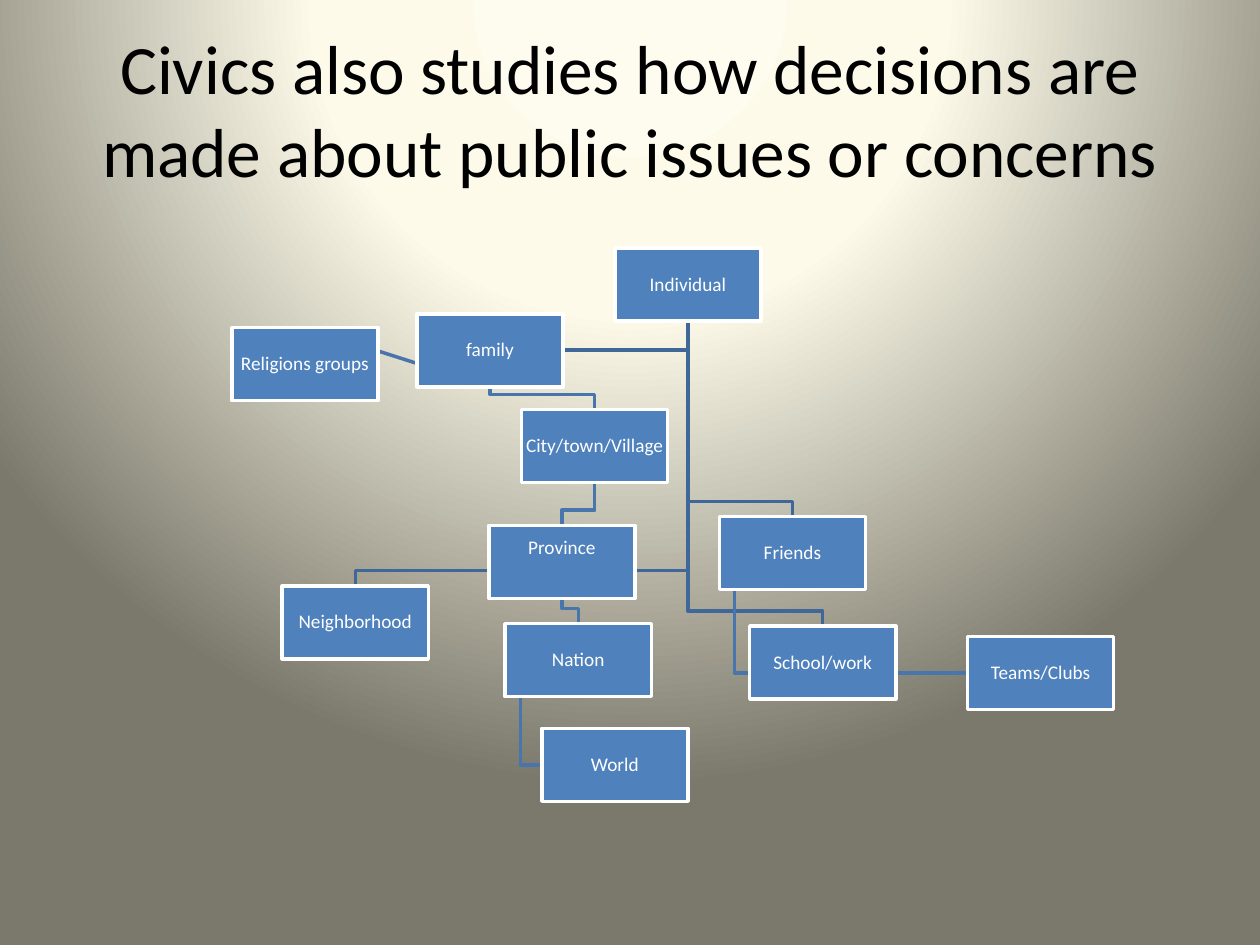
from pptx import Presentation
from pptx.dml.color import RGBColor
from pptx.enum.shapes import MSO_CONNECTOR, MSO_SHAPE
from pptx.enum.text import MSO_ANCHOR, MSO_AUTO_SIZE, PP_ALIGN
from pptx.oxml import parse_xml
from pptx.oxml.ns import nsdecls, qn
from pptx.util import Inches, Pt
from lxml.etree import SubElement

BLACK = RGBColor(0x00, 0x00, 0x00)
WHITE = RGBColor(0xFF, 0xFF, 0xFF)
BLUE = RGBColor(0x4F, 0x81, 0xBD)
MAIN_LINE = RGBColor(0x3F, 0x67, 0x97)
SUB_LINE = RGBColor(0x48, 0x75, 0xAC)
BACKDROP = [(0, RGBColor(0xFE, 0xFC, 0xEE)), (40, RGBColor(0xFD, 0xFA, 0xEA)),
            (100, RGBColor(0x7B, 0x79, 0x6B))]

CELL = Inches(0.1)  # the slide is 100 columns by 75 rows
BOX_SIZE = (11.6, 5.8)
BEND = round(1.2 * CELL)  # distance from a bend to the box it leads to

# Box name: column, row
BOXES = {
    "Individual": (48.8, 19.7),
    "Friends": (57.1, 41),
    "Teams/Clubs": (76.8, 50.5),
    "School/work": (59.5, 49.7),
    "Neighborhood": (22.4, 46.5),
    "family": (33.1, 24.9),
    "Religions groups": (18.4, 26),
    "City/town/Village": (41.4, 32.5),
    "Province": (38.8, 41.7),
    "Nation": (40.1, 49.5),
    "World": (43, 57.8),
}

# Parent, child, route, colour
LINKS = [
    ("Nation", "World", "hang", SUB_LINE),
    ("Province", "Nation", "drop", SUB_LINE),
    ("City/town/Village", "Province", "drop", SUB_LINE),
    ("family", "City/town/Village", "drop", SUB_LINE),
    ("family", "Religions groups", "straight", SUB_LINE),
    ("Individual", "family", "side", MAIN_LINE),
    ("Individual", "Neighborhood", "drop", MAIN_LINE),
    ("Individual", "School/work", "drop", MAIN_LINE),
    ("Friends", "Teams/Clubs", "hang", SUB_LINE),
    ("Individual", "Friends", "drop", MAIN_LINE),
]


def apply(target, values):
    for name, value in values.items():
        setattr(target, name, value)


class Chart:
    """Holds the style and the slide being drawn."""

    font = "Calibri"
    line_width = Pt(2)

    def __init__(self, page):
        self.page = page
        self.boxes = {}

    def place(self, column, row, columns, rows):
        names = ("left", "top", "width", "height")
        return {name: round(value * CELL)
                for name, value in zip(names, (column, row, columns, rows))}

    def background(self):
        stops = "".join(f'<a:gs pos="{share * 1000}"><a:srgbClr val="{color}"/></a:gs>'
                        for share, color in BACKDROP)
        self.page._element.cSld.insert(0, parse_xml(
            f'<p:bg {nsdecls("p", "a")}><p:bgPr><a:gradFill rotWithShape="1">'
            f'<a:gsLst>{stops}</a:gsLst><a:path path="circle">'
            '<a:fillToRect l="50000" t="-80000" r="50000" b="180000"/></a:path>'
            '</a:gradFill><a:effectLst/></p:bgPr></p:bg>'))

    def label(self, frame, text, size, color):
        apply(frame, {"word_wrap": True, "auto_size": MSO_AUTO_SIZE.NONE,
                      "vertical_anchor": MSO_ANCHOR.MIDDLE})
        para = frame.paragraphs[0]
        para.alignment = PP_ALIGN.CENTER
        span = para.add_run()
        span.text = text
        apply(span.font, {"name": self.font, "size": Pt(size)})
        span.font.color.rgb = color
        return para

    def title(self, text, *area):
        title = self.page.shapes.title
        apply(title, self.place(*area))
        self.label(title.text_frame, text, 39.6, BLACK)

    def box(self, text, column, row, bottom=0.01):
        area = self.place(column, row, *BOX_SIZE)
        box = self.page.shapes.add_shape(MSO_SHAPE.RECTANGLE, *area.values())
        box.shadow.inherit = False
        box.fill.solid()
        box.fill.fore_color.rgb = BLUE
        self.outline(box, WHITE)
        margins = {f"margin_{side}": Inches(0.01) for side in ("left", "top", "right")}
        apply(box.text_frame, margins | {"margin_bottom": Inches(bottom)})
        self.label(box.text_frame, text, 11, WHITE).line_spacing = 0.9
        self.boxes[text] = box

    def outline(self, shape, color):
        shape.line.width = self.line_width
        shape.line.color.rgb = color

    def straight(self, parent, child):
        line = self.page.shapes.add_connector(MSO_CONNECTOR.STRAIGHT, 0, 0, 0, 0)
        line.begin_connect(parent, 2)
        line.end_connect(child, 0)
        return line

    def bent(self, parent, child, route):
        bottom = parent.top + parent.height
        start = parent.left + parent.width // 2
        middle = child.top + child.height // 2
        center = child.left + child.width // 2
        if route == "hang":
            start = parent.left + BEND
            points = [(start, middle), (child.left, middle)]
        elif route == "side":
            points = [(start, middle), (child.left + child.width, middle)]
        else:
            bend = child.top - BEND
            points = [(start, bend), (center, bend), (center, child.top)]
        builder = self.page.shapes.build_freeform(start, bottom)
        builder.add_line_segments(points, close=False)
        line = builder.convert_to_shape()
        line.fill.background()
        return line

    def link(self, parent, child, route, color):
        ends = self.boxes[parent], self.boxes[child]
        line = self.straight(*ends) if route == "straight" else self.bent(*ends, route)
        self.outline(line, color)
        SubElement(line._element.spPr, qn("a:effectLst"))
        # Lines lie behind every box
        self.boxes["Individual"]._element.addprevious(line._element)


def main():
    deck = Presentation()
    apply(deck, {"slide_width": 100 * CELL, "slide_height": 75 * CELL})
    chart = Chart(deck.slides.add_slide(deck.slide_layouts[5]))

    # Backdrop and title
    chart.background()
    chart.title("Civics also studies how decisions are made about public issues or concerns",
                5, 3, 90, 11.2)

    # Boxes; Province sits high in its box
    for name, spot in BOXES.items():
        chart.box(name, *spot, bottom=0.23 if name == "Province" else 0.01)

    # Lines between boxes
    for link in LINKS:
        chart.link(*link)

    deck.save("out.pptx")


if __name__ == "__main__":
    main()
